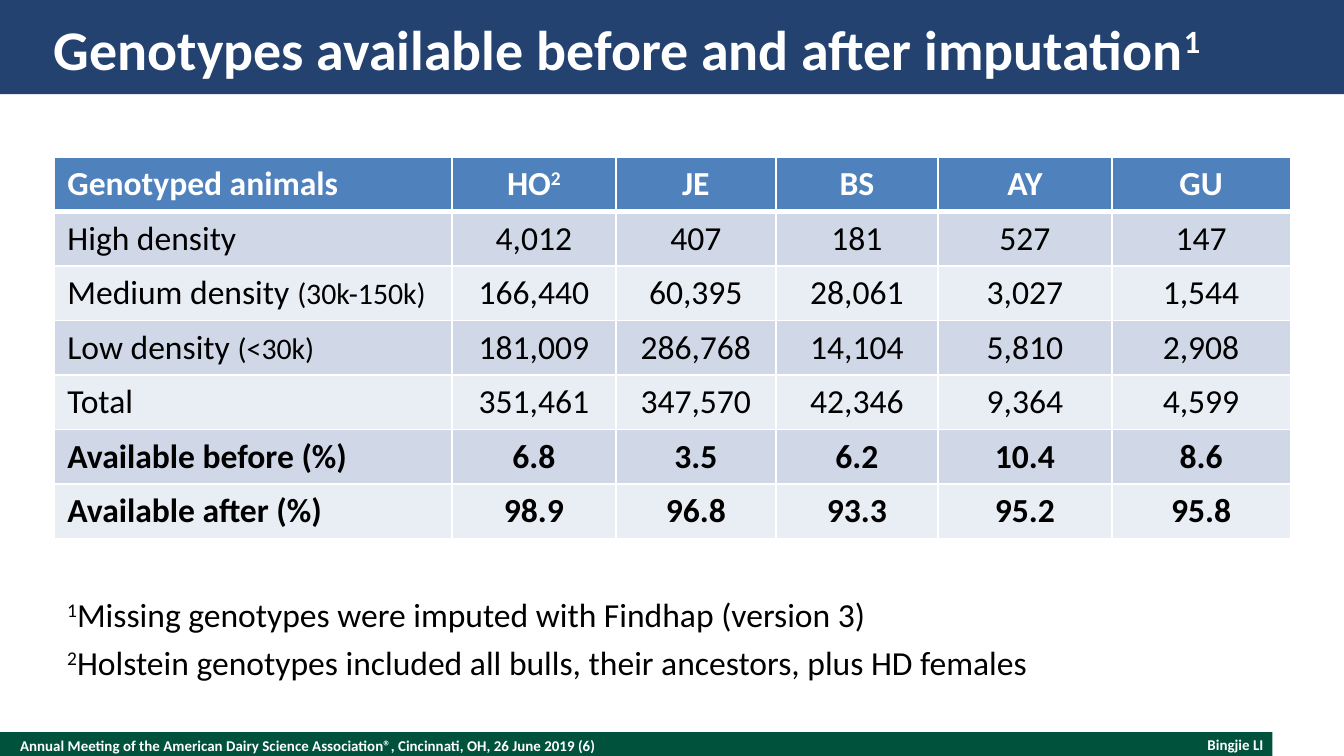
"""Build the slide on genotypes available before and after imputation."""
from dataclasses import dataclass
from typing import NamedTuple

from lxml import etree
from pptx import Presentation
from pptx import util as u
from pptx.dml.color import RGBColor
from pptx.enum import shapes, text
from pptx.oxml import ns

LEFT, MID, RIGHT = text.PP_ALIGN.LEFT, text.PP_ALIGN.CENTER, text.PP_ALIGN.RIGHT


@dataclass(frozen=True)
class Theme:
    font: str = "Calibri"
    white: str = "FFFFFF"
    black: str = "000000"
    navy: str = "244270"
    green: str = "00523C"
    head: str = "4F81BD"
    bands: tuple = ("D0D8E8", "E9EDF4")
    title: int = 30
    body: int = 18
    small: int = 16
    foot: int = 8


class Box(NamedTuple):
    left: float
    top: float
    width: float
    height: float

    def cm(self) -> list:
        return [u.Cm(side) for side in self]


class Bit(NamedTuple):
    text: str
    size: int = 0
    sup: bool = False


class Style(NamedTuple):
    size: int
    color: str
    bold: bool = False
    align: text.PP_ALIGN = LEFT


class Label(NamedTuple):
    box: Box
    bits: list
    style: Style
    inset: bool = False
    wrap: bool = True


T = Theme()

BARS = [
    (Box(0, 13.84, 24.05, 0.45), T.green),
    (Box(0, 0, 25.4, 1.78), T.navy),
]

FOOT = Style(T.foot, T.white, True)
NOTE = Style(T.body, T.black)
LABELS = [
    Label(Box(0.38, 13.84, 16.51, 0.5),
          [Bit("Annual Meeting of the American Dairy Science Association®, "
               "Cincinnati, OH, 26 June 2019 (6)")], FOOT),
    Label(Box(18.29, 13.9, 5.59, 0.33), [Bit("Bingjie LI")],
          FOOT._replace(align=RIGHT)),
    Label(Box(1.02, 0.25, 23.37, 1.32),
          [Bit("Genotypes available before and after imputation"), Bit("1", sup=True)],
          Style(T.title, T.white, True)),
    Label(Box(1.02, 11.1, 16.08, 1.02),
          [Bit("1", sup=True),
           Bit("Missing genotypes were imputed with Findhap (version 3)")],
          NOTE, True),
    Label(Box(1.02, 12.01, 18.92, 1.02),
          [Bit("2", sup=True),
           Bit("Holstein genotypes included all bulls, their ancestors, plus HD females")],
          NOTE, True, False),
]

GRID = Box(1.02, 2.97, 23.37, 7.21)
COLS = [7.52, 3.1, 3.02, 3.07, 3.28, 3.38]
ROWS = [
    ["Genotyped animals", [Bit("HO"), Bit("2", sup=True)], "JE", "BS", "AY", "GU"],
    ["High density", "4,012", "407", "181", "527", "147"],
    [[Bit("Medium density "), Bit("(30k-150k)", T.small)],
     "166,440", "60,395", "28,061", "3,027", "1,544"],
    [[Bit("Low density "), Bit("(<30k)", T.small)],
     "181,009", "286,768", "14,104", "5,810", "2,908"],
    ["Total", "351,461", "347,570", "42,346", "9,364", "4,599"],
    ["Available before (%)", "6.8", "3.5", "6.2", "10.4", "8.6"],
    ["Available after (%)", "98.9", "96.8", "93.3", "95.2", "95.8"],
]


def write(frame, bits: list, style: Style) -> None:
    para = frame.paragraphs[0]
    para.text = bits[0].text
    para.alignment = style.align
    for bit in bits[1:]:
        para.add_run().text = bit.text
    for run, bit in zip(para.runs, bits):
        font = run.font
        font.name = T.font
        font.size = u.Pt(bit.size or style.size)
        font.bold = style.bold
        font.color.rgb = RGBColor.from_string(style.color)
        if bit.sup:
            run._r.get_or_add_rPr().set("baseline", "30000")


def draw_bar(slide, box: Box, color: str) -> None:
    bar = slide.shapes.add_shape(shapes.MSO_SHAPE.RECTANGLE, *box.cm())
    bar.shadow.inherit = False
    bar.fill.solid()
    bar.fill.fore_color.rgb = RGBColor.from_string(color)
    bar.line.fill.background()


def draw_label(slide, label: Label) -> None:
    frame = slide.shapes.add_textbox(*label.box.cm()).text_frame
    frame.word_wrap = label.wrap
    if not label.inset:
        frame.vertical_anchor = text.MSO_ANCHOR.MIDDLE
        frame.margin_left = frame.margin_right = 0
        frame.margin_top = frame.margin_bottom = 0
    write(frame, label.bits, label.style)


def edge(cell, side: str, width: float) -> None:
    line = etree.SubElement(cell._tc.get_or_add_tcPr(), ns.qn(f"a:ln{side}"),
                            w=str(u.Pt(width)))
    fill = etree.SubElement(line, ns.qn("a:solidFill"))
    etree.SubElement(fill, ns.qn("a:srgbClr"), val=T.white)


def draw_cell(cell, row: int, col: int, item) -> None:
    head = row == 0
    for side in "LRTB":
        thick = (row, side) in ((0, "B"), (1, "T"))
        edge(cell, side, 3 if thick else 1)
    cell.fill.solid()
    color = T.head if head else T.bands[(row - 1) % 2]
    cell.fill.fore_color.rgb = RGBColor.from_string(color)
    bits = [Bit(item)] if isinstance(item, str) else item
    style = Style(T.body, T.white if head else T.black,
                  head or row >= len(ROWS) - 2, MID if col else LEFT)
    write(cell.text_frame, bits, style)


def draw_table(slide) -> None:
    table = slide.shapes.add_table(len(ROWS), len(COLS), *GRID.cm()).table
    for col, width in zip(table.columns, COLS):
        col.width = u.Cm(width)
    for r, items in enumerate(ROWS):
        table.rows[r].height = u.Cm(GRID.height / len(ROWS))
        for c, item in enumerate(items):
            draw_cell(table.cell(r, c), r, c, item)


def main() -> None:
    deck = Presentation()
    deck.slide_width, deck.slide_height = u.Cm(25.4), u.Cm(14.29)
    slide = deck.slides.add_slide(deck.slide_layouts[6])
    for box, color in BARS:
        draw_bar(slide, box, color)
    for label in LABELS:
        draw_label(slide, label)
    draw_table(slide)
    deck.save("out.pptx")


if __name__ == "__main__":
    main()
